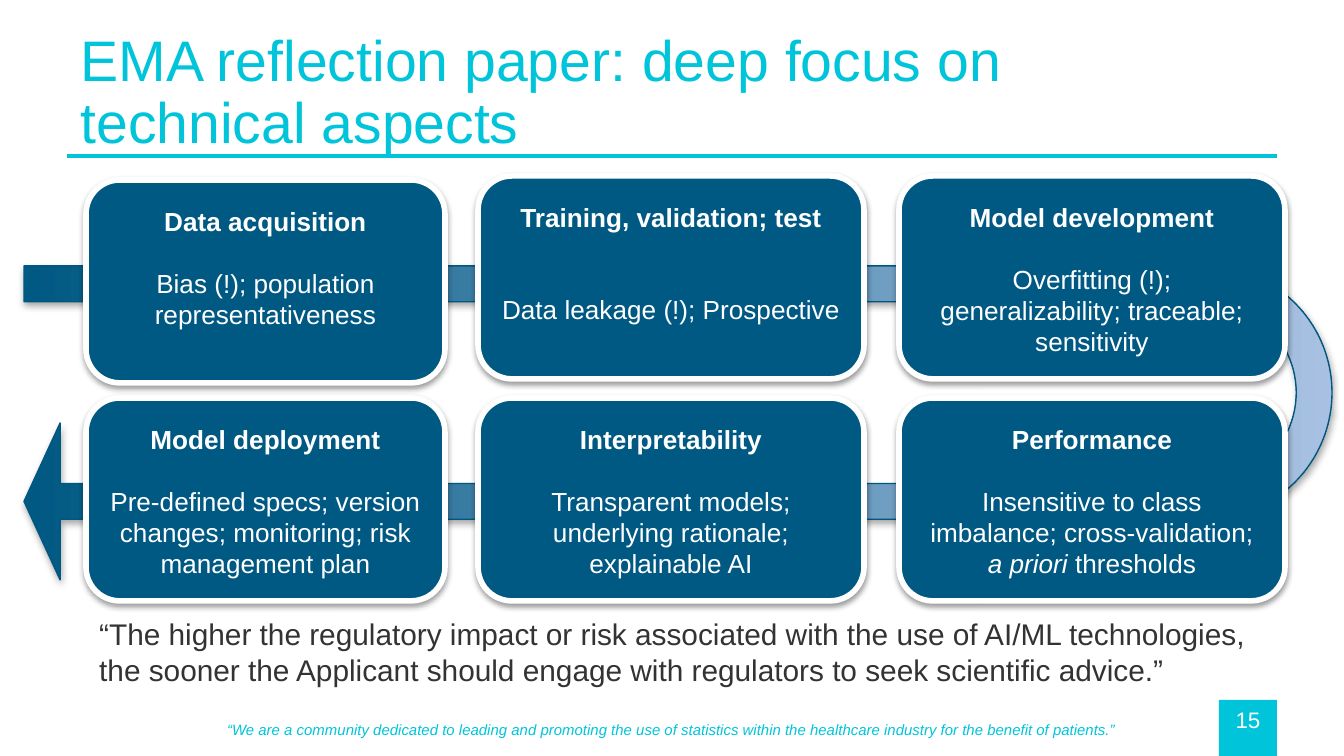
import pptx
import pptx.dml.color
import pptx.enum.dml
import pptx.enum.shapes
import pptx.enum.text
import pptx.oxml
import pptx.oxml.ns
import pptx.util

EMU_PER_PX = 914400 / 134.4
SHAPES = pptx.enum.shapes.MSO_SHAPE
ALIGN = pptx.enum.text.PP_ALIGN
ANCHOR = pptx.enum.text.MSO_ANCHOR

CYAN, NAVY, PALE, OUTLINE = "00C4D9", "005983", "A8C1E2", "005780"
WHITE, GREY = "FFFFFF", "333333"

COLUMNS = [(86, 359), (478, 386), (899, 386)]  # left, width
ROWS = [176, 398]
CARD_HEIGHT = 203
LINE_GAP = 16  # points, one line of card text

# column, row, drop below the row's top, heading, gap in points, body runs (text, italic)
CARDS = [
    (0, 0, 4, "Data acquisition", LINE_GAP,
     [("Bias (!); population representativeness", False)]),
    (1, 0, 0, "Training, validation; test", 2 * LINE_GAP,
     [("Data leakage (!); Prospective", False)]),
    (2, 0, 0, "Model development", LINE_GAP,
     [("Overfitting (!); generalizability; traceable; sensitivity", False)]),
    (2, 1, 0, "Performance", LINE_GAP,
     [("Insensitive to class imbalance; cross-validation; ", False),
      ("a priori", True), (" thresholds", False)]),
    (1, 1, 0, "Interpretability", LINE_GAP,
     [("Transparent models; underlying rationale; explainable AI", False)]),
    (0, 1, 0, "Model deployment", LINE_GAP,
     [("Pre-defined specs; version changes; monitoring; risk management plan", False)]),
]


def px(length):
    return pptx.util.Emu(round(length * EMU_PER_PX))


def color(hex_code):
    return pptx.dml.color.RGBColor.from_string(hex_code)


def add_span(para, text, size, hex_code, bold=False, italic=False):
    span = para.add_run()
    span.text = text
    font = span.font
    font.name = "Arial"
    font.size = pptx.util.Pt(size)
    font.bold = bold
    font.italic = italic
    font.color.rgb = color(hex_code)


def add_shadow(shape, opacity, distance):
    """Give the shape a soft shadow straight below; opacity in percent, distance in points."""
    shape.shadow.inherit = False
    effects = shape._element.spPr.find(pptx.oxml.ns.qn("a:effectLst"))
    effects.append(pptx.oxml.parse_xml(
        f'<a:outerShdw {pptx.oxml.ns.nsdecls("a")} blurRad="{pptx.util.Pt(3.1)}" '
        f'dist="{pptx.util.Pt(distance)}" dir="5400000" rotWithShape="0">'
        f'<a:srgbClr val="000000"><a:alpha val="{opacity * 1000}"/></a:srgbClr>'
        '</a:outerShdw>'))


class SlideBuilder:
    def __init__(self, deck):
        self.page = deck.slides.add_slide(deck.slide_layouts[5])

    def title(self, text, left, top, width, height):
        box = self.page.shapes.title
        box.left, box.top, box.width, box.height = map(px, (left, top, width, height))
        frame = box.text_frame
        frame.word_wrap = True
        frame.auto_size = pptx.enum.text.MSO_AUTO_SIZE.NONE
        frame.vertical_anchor = ANCHOR.MIDDLE
        para = frame.paragraphs[0]
        para.alignment = ALIGN.LEFT
        para.line_spacing = 0.9
        add_span(para, text, 30.6, CYAN)

    def text_box(self, text, left, top, width, height, align=ALIGN.LEFT,
                 anchor=ANCHOR.TOP, **font):
        box = self.page.shapes.add_textbox(*map(px, (left, top, width, height)))
        frame = box.text_frame
        frame.word_wrap = True
        frame.vertical_anchor = anchor
        para = frame.paragraphs[0]
        para.alignment = align
        add_span(para, text, **font)

    def shape(self, kind, left, top, width, height, fill=None, line=None, weight=1):
        shape = self.page.shapes.add_shape(kind, *map(px, (left, top, width, height)))
        shape.shadow.inherit = False
        if fill:
            shape.fill.solid()
            shape.fill.fore_color.rgb = color(fill)
        if line:
            shape.line.color.rgb = color(line)
            shape.line.width = pptx.util.Pt(weight)
        else:
            shape.line.fill.background()
        return shape

    def rule(self, left, right, y):
        rule = self.page.shapes.add_connector(
            pptx.enum.shapes.MSO_CONNECTOR.STRAIGHT, px(left), px(y), px(right), px(y))
        rule.line.color.rgb = color(CYAN)
        rule.line.width = pptx.util.Pt(2)
        rule._element.spPr.append(
            pptx.oxml.parse_xml(f'<a:effectLst {pptx.oxml.ns.nsdecls("a")}/>'))

    def process_arrow(self, left, top, width, height):
        """Draw the U-turn behind the cards, turned so that it runs right and then back left."""
        arrow = self.shape(SHAPES.U_TURN_ARROW, left, top, width, height,
                           line=OUTLINE, weight=0.75)
        arrow.rotation = 90
        for index, value in enumerate((0.114, 0.25, 0.115, 0.438, 1)):
            arrow.adjustments[index] = value
        arrow.fill.gradient()
        arrow.fill.gradient_angle = 90
        for stop, hex_code in zip(arrow.fill.gradient_stops, (NAVY, PALE)):
            stop.color.rgb = color(hex_code)
        for stop, position in zip(arrow.fill.gradient_stops, (0, 1)):
            stop.position = position
        add_shadow(arrow, 35, 1.8)

    def card(self, left, top, width, heading, gap, body):
        card = self.shape(SHAPES.ROUNDED_RECTANGLE, left, top, width, CARD_HEIGHT,
                          fill=NAVY, line=WHITE, weight=3)
        add_shadow(card, 38, 1.6)
        frame = card.text_frame
        frame.word_wrap = True
        frame.vertical_anchor = ANCHOR.TOP
        frame.margin_top = px(16)
        para = frame.paragraphs[0]
        para.alignment = ALIGN.CENTER
        add_span(para, heading, 14, WHITE, bold=True)
        para = frame.add_paragraph()
        para.alignment = ALIGN.CENTER
        para.space_before = pptx.util.Pt(gap)
        for text, italic in body:
            add_span(para, text, 14, WHITE, italic=italic)


def main():
    deck = pptx.Presentation()
    deck.slide_width, deck.slide_height = px(1344), px(756)
    slide = SlideBuilder(deck)

    slide.shape(SHAPES.RECTANGLE, 1219, 700, 58, 56, fill=CYAN)
    slide.rule(67, 1277, 156)
    slide.text_box(
        "“We are a community dedicated to leading and promoting the use of statistics "
        "within the healthcare industry for the benefit of patients.”",
        67, 714, 1210, 32, align=ALIGN.CENTER, size=8, hex_code=CYAN, italic=True)
    slide.process_arrow(521, -231, 314, 1308)
    slide.title("EMA reflection paper: deep focus on technical aspects", 67, 31, 1038, 126)
    slide.text_box("15", 1219, 700, 58, 40, align=ALIGN.CENTER, anchor=ANCHOR.MIDDLE,
                   size=12, hex_code=WHITE)
    for column, row, drop, heading, gap, body in CARDS:
        left, width = COLUMNS[column]
        slide.card(left, ROWS[row] + drop, width, heading, gap, body)
    slide.text_box(
        "“The higher the regulatory impact or risk associated with the use of AI/ML "
        "technologies, the sooner the Applicant should engage with regulators to seek "
        "scientific advice.”",
        86, 609, 1207, 86, size=16, hex_code=GREY)

    deck.save("out.pptx")


if __name__ == "__main__":
    main()
